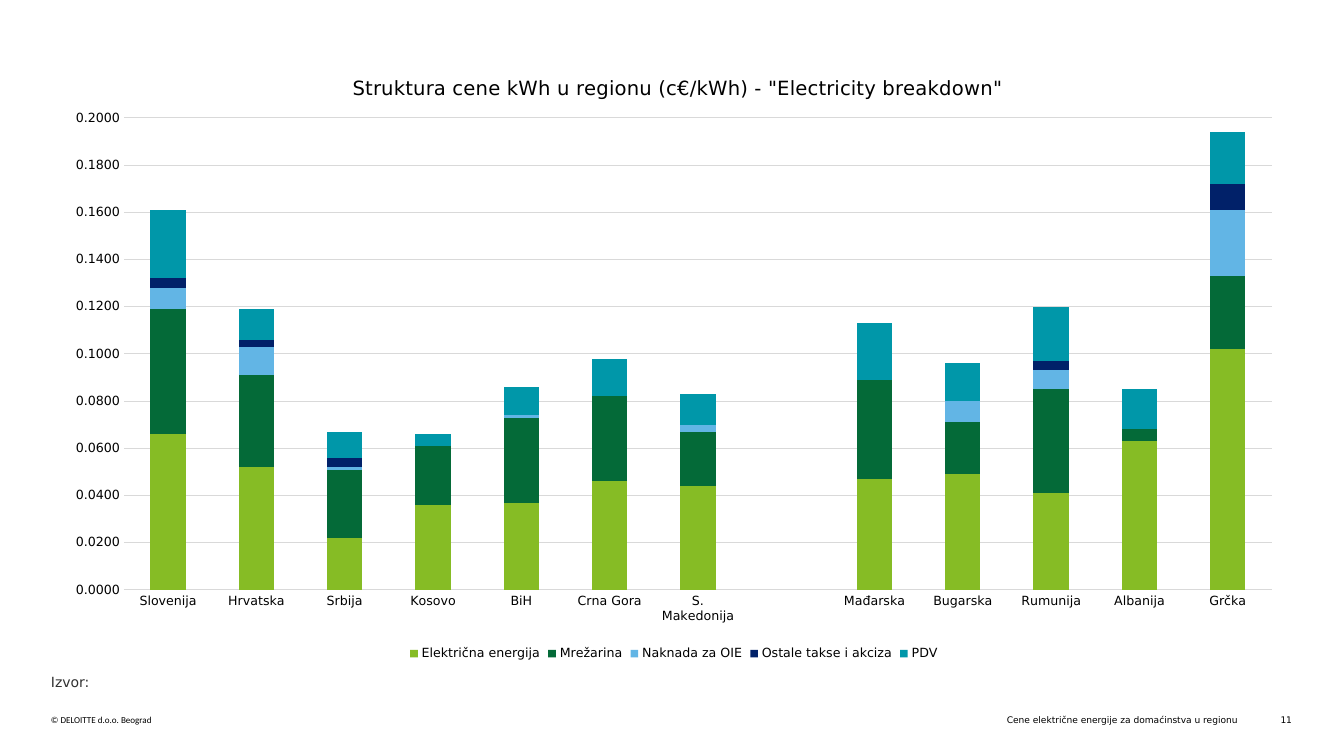
"""Build the slide on the structure of household electricity prices in the region."""
from dataclasses import dataclass

from pptx import Presentation
from pptx import util as u
from pptx.chart import data
from pptx.dml.color import RGBColor
from pptx.enum import chart as ch, text
from pptx.oxml import ns, xmlchemy

PX = u.Inches(1) / 100.8
BLACK = RGBColor(0x00, 0x00, 0x00)
CHARCOAL = RGBColor(0x31, 0x31, 0x31)
GRID = RGBColor(0xD9, 0xD9, 0xD9)
LIME = RGBColor(0x86, 0xBC, 0x25)
GREEN = RGBColor(0x04, 0x6A, 0x38)
SKY = RGBColor(0x62, 0xB5, 0xE5)
NAVY = RGBColor(0x01, 0x21, 0x69)
TEAL = RGBColor(0x00, 0x97, 0xA9)

TITLE = 'Struktura cene kWh u regionu (c€/kWh) - "Electricity breakdown"'
COUNTRIES = ["Slovenija", "Hrvatska", "Srbija", "Kosovo", "BiH", "Crna Gora",
             "S. Makedonija", "", "Mađarska", "Bugarska", "Rumunija", "Albanija", "Grčka"]
COMPONENTS = [
    ("Električna energija", LIME, [0.066, 0.052, 0.022, 0.036, 0.037, 0.046, 0.044, None,
                                   0.047, 0.049, 0.041, 0.063, 0.102]),
    ("Mrežarina", GREEN, [0.053, 0.039, 0.029, 0.025, 0.036, 0.036, 0.023, None,
                          0.042, 0.022, 0.044, 0.005, 0.031]),
    ("Naknada za OIE", SKY, [0.009, 0.012, 0.001, 0, 0.001, 0, 0.003, None,
                             0, 0.009, 0.008, 0, 0.028]),
    ("Ostale takse i akciza", NAVY, [0.004, 0.003, 0.004, 0, 0, 0, 0, None,
                                     0, 0, 0.004, 0, 0.011]),
    ("PDV", TEAL, [0.029, 0.013, 0.011, 0.005, 0.012, 0.016, 0.013, None,
                   0.024, 0.016, 0.023, 0.017, 0.022]),
]


def px(*lengths):
    return [u.Emu(round(length * PX)) for length in lengths]


def style_font(font, size, color=BLACK, name="DejaVu Sans"):
    font.size, font.name, font.bold = u.Pt(size), name, False
    font.color.rgb = color


def write(frame, content, align=text.PP_ALIGN.LEFT, **style):
    paragraph = frame.paragraphs[0]
    paragraph.alignment = align
    run = paragraph.add_run()
    run.text = content
    style_font(run.font, **style)


def place(part, **fractions):
    layout = part.find(ns.qn("c:layout"))
    if layout is None:
        layout = xmlchemy.OxmlElement("c:layout")
        part.insert(0, layout)
    manual = xmlchemy.OxmlElement("c:manualLayout")
    layout.append(manual)
    settings = {"xMode": "edge", "yMode": "edge", **fractions}
    if "w" in fractions:
        settings = {"layoutTarget": "inner", **settings}
    for tag, value in settings.items():
        setting = xmlchemy.OxmlElement(f"c:{tag}")
        setting.set("val", str(value))
        manual.append(setting)


@dataclass
class Deck:
    """Hold the current slide and the sizes of its text."""
    slide: object
    small: float = 6.5
    label: float = 9
    heading: float = 14

    def note(self, content, left, top, width, height, **style):
        frame = self.slide.shapes.add_textbox(*px(left, top, width, height)).text_frame
        frame.margin_left = frame.margin_right = frame.margin_top = frame.margin_bottom = 0
        frame.word_wrap = True
        write(frame, content, **{"size": self.small, **style})

    def stacked_columns(self, title, categories, components, left, top, width, height):
        prices = data.CategoryChartData(number_format="0.0000")
        prices.categories = categories
        for name, _, values in components:
            prices.add_series(name, values)
        chart = self.slide.shapes.add_chart(
            ch.XL_CHART_TYPE.COLUMN_STACKED, *px(left, top, width, height), prices).chart
        style_font(chart.font, 10)
        write(chart.chart_title.text_frame, title, text.PP_ALIGN.CENTER, size=self.heading)
        chart.chart_title.include_in_layout = False

        columns = chart.plots[0]
        columns.gap_width, columns.overlap, columns.vary_by_categories = 150, 100, False
        for series, (_, color, _) in zip(columns.series, components):
            series.format.fill.solid()
            series.format.fill.fore_color.rgb = color

        for axis in (chart.category_axis, chart.value_axis):
            axis.major_tick_mark = axis.minor_tick_mark = ch.XL_TICK_MARK.NONE
            style_font(axis.tick_labels.font, self.label)
        price_axis = chart.value_axis
        price_axis.minimum_scale, price_axis.maximum_scale, price_axis.major_unit = 0, 0.2, 0.02
        price_axis.tick_labels.number_format = "0.0000"
        price_axis.tick_labels.number_format_is_linked = False
        price_axis.format.line.fill.background()
        for line in (chart.category_axis.format.line, price_axis.major_gridlines.format.line):
            line.color.rgb, line.width = GRID, u.Pt(0.75)

        chart.has_legend = True
        chart.legend.position = ch.XL_LEGEND_POSITION.BOTTOM
        chart.legend.include_in_layout = False
        style_font(chart.legend.font, self.label)

        body = chart.element.find(ns.qn("c:chart"))
        place(body.find(ns.qn("c:title")), x=298 / width, y=24 / height)
        place(body.find(ns.qn("c:plotArea")),
              x=73 / width, y=71 / height, w=1148 / width, h=472 / height)


def main():
    prs = Presentation()
    prs.slide_width, prs.slide_height = px(1344, 756)
    deck = Deck(prs.slides.add_slide(prs.slide_layouts[6]))
    deck.note("Cene električne energije za domaćinstva u regionu", 699, 714, 539, 11,
              align=text.PP_ALIGN.RIGHT)
    deck.note("© DELOITTE d.o.o. Beograd", 51, 714, 591, 11, name="Calibri")
    deck.note("11", 1258, 714, 34, 11, align=text.PP_ALIGN.RIGHT)
    deck.note("Izvor:", 51, 674, 53, 17, size=10, color=CHARCOAL)
    deck.stacked_columns(TITLE, COUNTRIES, COMPONENTS, 51, 47, 1246, 618)
    prs.save("out.pptx")


if __name__ == "__main__":
    main()
